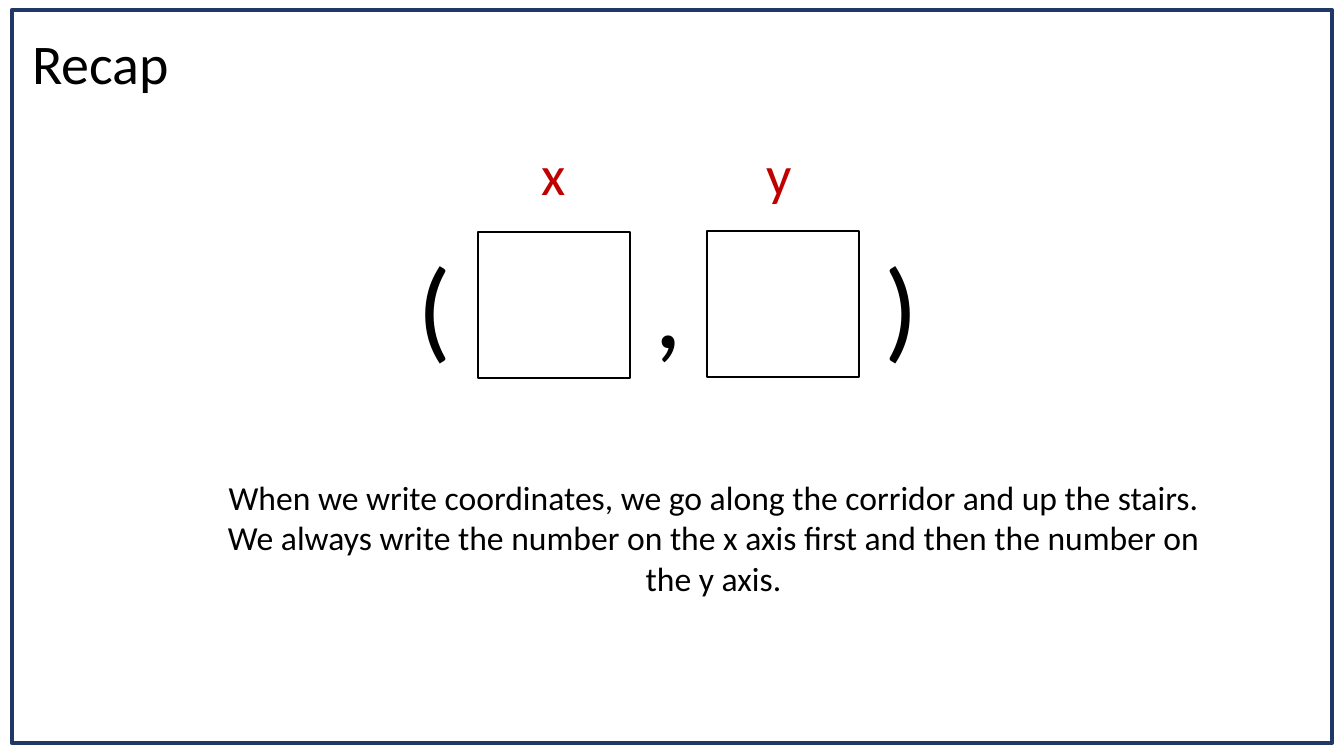
from dataclasses import dataclass

from pptx import Presentation
from pptx import util as u
from pptx.dml.color import RGBColor
from pptx.enum import shapes, text

TITLE = ("Recap", (22, 23, 158, 78))
FRAME = (12, 10, 1320, 733)
ANSWER_BOXES = [(478, 232, 152, 146), (707, 231, 152, 146)]
AXIS_LABELS = [("x", (532, 135, 45, 78)), ("y", (757, 135, 46, 78))]
BRACKET_MARKS = [
    ("(", (408, 232, 54, 146)),
    (",", (645, 232, 48, 146)),
    (")", (875, 232, 54, 146)),
]
RULE_AREA = (215, 472, 997, 132)
RULE_LINES = [
    "When we write coordinates, we go along the corridor and up the stairs.",
    "We always write the number on the x axis first and then the number on the y axis.",
]


@dataclass(frozen=True)
class Theme:
    font: str = "Calibri"
    ink: str = "000000"
    axis: str = "C00000"
    frame: str = "203864"
    heading: int = 40
    mark: int = 80
    body: int = 24


THEME = Theme()
EMU_PER_PX = 914400 / 100.8


def emu(px):
    return u.Emu(round(px * EMU_PER_PX))


def place(shape, area):
    shape.left, shape.top, shape.width, shape.height = map(emu, area)


def write(shape, lines, size, color=THEME.ink, align=text.PP_ALIGN.LEFT, wrap=False):
    frame = shape.text_frame
    frame.word_wrap = wrap
    frame.auto_size = text.MSO_AUTO_SIZE.SHAPE_TO_FIT_TEXT
    frame.vertical_anchor = text.MSO_ANCHOR.TOP
    for index, line in enumerate(lines):
        para = frame.add_paragraph() if index else frame.paragraphs[0]
        para.alignment = align
        span = para.add_run()
        span.text = line
        span.font.name = THEME.font
        span.font.size = u.Pt(size)
        span.font.color.rgb = RGBColor.from_string(color)


def add_label(page, area, lines, size, **style):
    box = page.shapes.add_textbox(*map(emu, area))
    write(box, lines, size, **style)


def add_outline(page, area, color, weight):
    box = page.shapes.add_shape(shapes.MSO_SHAPE.RECTANGLE, *map(emu, area))
    box.shadow.inherit = False
    box.fill.background()
    box.line.color.rgb = RGBColor.from_string(color)
    box.line.width = u.Pt(weight)


def main():
    deck = Presentation()
    deck.slide_width, deck.slide_height = emu(1344), emu(756)
    page = deck.slides.add_slide(deck.slide_layouts.get_by_name("Title Only"))

    heading, area = TITLE
    place(page.shapes.title, area)
    write(page.shapes.title, [heading], THEME.heading)

    add_outline(page, FRAME, THEME.frame, 3)
    for mark, area in BRACKET_MARKS:
        add_label(page, area, [mark], THEME.mark)
    for axis, area in AXIS_LABELS:
        add_label(page, area, [axis], THEME.heading, color=THEME.axis)
    for area in ANSWER_BOXES:
        add_outline(page, area, THEME.ink, 1)
    add_label(page, RULE_AREA, RULE_LINES, THEME.body,
              align=text.PP_ALIGN.CENTER, wrap=True)

    deck.save("out.pptx")


if __name__ == "__main__":
    main()
